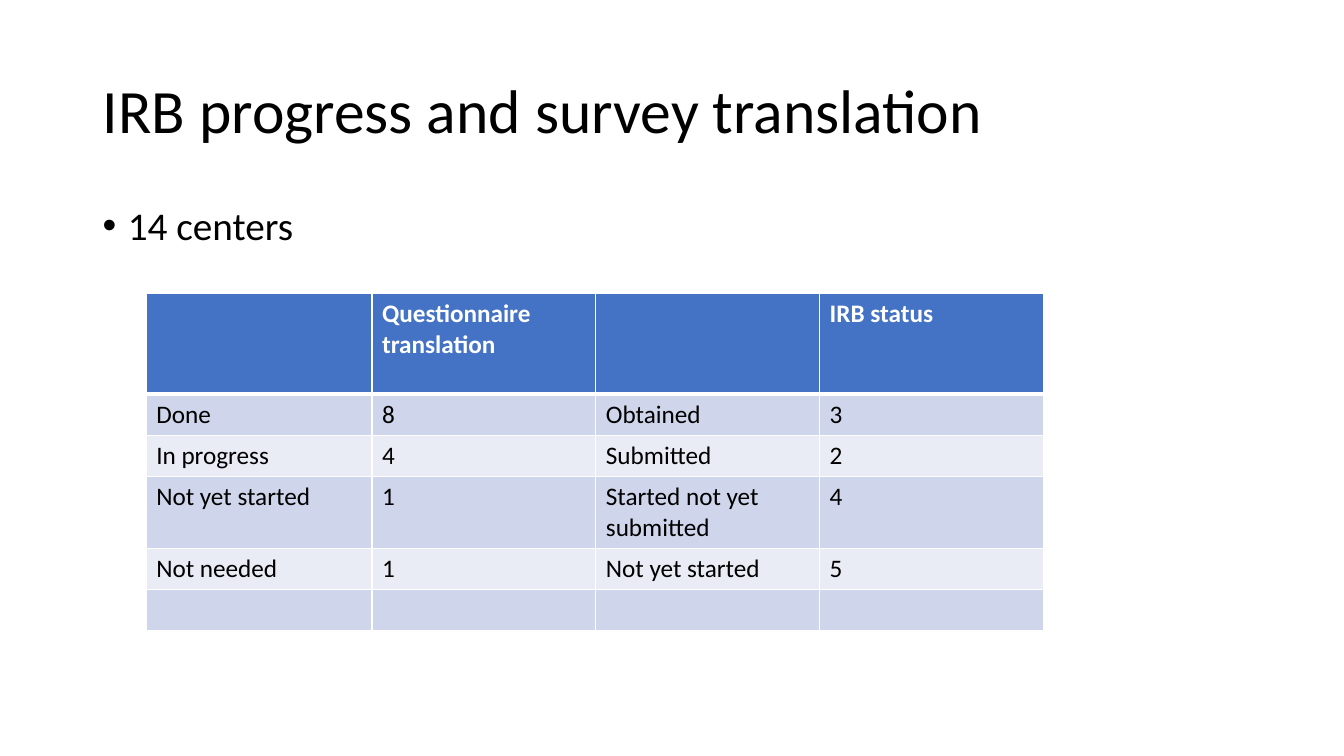
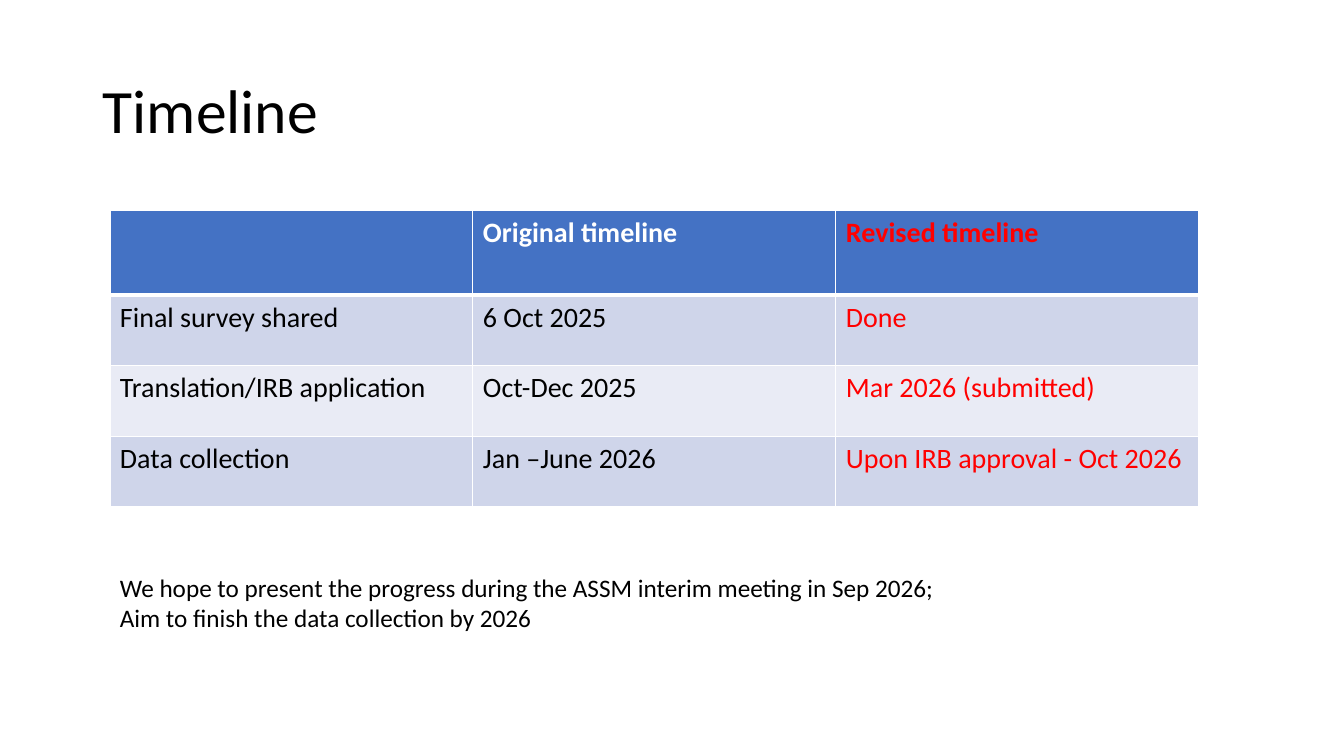
import pptx
import pptx.util
import pptx.dml.color
import pptx.enum.text
import pptx.oxml
import pptx.oxml.ns

Inches = pptx.util.Inches
Pt = pptx.util.Pt
anchor = pptx.enum.text.MSO_ANCHOR

FONT = "Calibri"
BLACK, WHITE, RED = "000000", "FFFFFF", "FF0000"
HEAD = "4472C4"
BANDS = ["CFD5EA", "E9EBF5"]
NS = pptx.oxml.ns.nsdecls("a")


def style(para, size, color=BLACK, bold=False):
    font = para.font
    font.name, font.size, font.bold = FONT, Pt(size), bold
    font.color.rgb = pptx.dml.color.RGBColor.from_string(color)


def grid(slide, left, top, cols, rows, data, size, accent=None):
    """Banded table; the accent column has red text."""
    table = slide.shapes.add_table(
        len(rows), len(cols), Inches(left), Inches(top),
        Inches(sum(cols)), Inches(sum(rows))).table
    table.horz_banding = False
    for col, width in zip(table.columns, cols):
        col.width = Inches(width)
    for r, height in enumerate(rows):
        table.rows[r].height = Inches(height)
        for c, text in enumerate(data[r]):
            cell = table.cell(r, c)
            # White borders, thicker under the header
            props = cell._tc.get_or_add_tcPr()
            for side in "LRTB":
                thick = (r, side) in [(0, "B"), (1, "T")]
                props.append(pptx.oxml.parse_xml(
                    f'<a:ln{side} {NS} w="{Pt(3 if thick else 1)}"><a:solidFill>'
                    f'<a:srgbClr val="{WHITE}"/></a:solidFill></a:ln{side}>'))
            cell.fill.solid()
            fill = BANDS[(r - 1) % 2] if r else HEAD
            cell.fill.fore_color.rgb = pptx.dml.color.RGBColor.from_string(fill)
            cell.text = text
            color = RED if c == accent else BLACK if r else WHITE
            style(cell.text_frame.paragraphs[0], size, color, r == 0)


deck = pptx.Presentation()
deck.slide_width, deck.slide_height = Inches(13.33), Inches(7.5)

# Slides and titles
slides = []
for text in ["IRB progress and survey translation", "Timeline"]:
    slide = deck.slides.add_slide(deck.slide_layouts[5])
    title = slide.shapes.title
    title.left, title.top = Inches(0.92), Inches(0.4)
    title.width, title.height = Inches(11.5), Inches(1.45)
    frame = title.text_frame
    frame.text = text
    frame.auto_size = pptx.enum.text.MSO_AUTO_SIZE.NONE
    frame.vertical_anchor = anchor.MIDDLE
    para = frame.paragraphs[0]
    para.alignment = pptx.enum.text.PP_ALIGN.LEFT
    para.line_spacing = 0.9
    style(para, 44)
    slides.append(slide)
status, plan = slides

# Status: bullet
box = status.shapes.add_textbox(Inches(0.92), Inches(2), Inches(11.5), Inches(0.75))
box.text_frame.word_wrap = True
para = box.text_frame.paragraphs[0]
para.text = "14 centers"
para.line_spacing = 0.9
props = para._p.get_or_add_pPr()
props.set("marL", str(Inches(0.25)))
props.set("indent", str(Inches(-0.25)))
props.append(pptx.oxml.parse_xml(f'<a:buFont {NS} typeface="Arial"/>'))
props.append(pptx.oxml.parse_xml(f'<a:buChar {NS} char="•"/>'))
style(para, 28)

# Status: table
grid(status, 1.45, 2.91, [2.24] + [2.22] * 3, [1, 0.41, 0.41, 0.71, 0.41, 0.41], [
    ["", "Questionnaire translation", "", "IRB status"],
    ["Done", "8", "Obtained", "3"],
    ["In progress", "4", "Submitted", "2"],
    ["Not yet started", "1", "Started not yet submitted", "4"],
    ["Not needed", "1", "Not yet started", "5"],
    ["", "", "", ""],
], 18)

# Plan: table
grid(plan, 1.09, 2.09, [3.6] * 3, [0.84] + [0.7] * 3, [
    ["", "Original timeline", "Revised timeline"],
    ["Final survey shared", "6 Oct 2025", "Done"],
    ["Translation/IRB application", "Oct-Dec 2025", "Mar 2026 (submitted)"],
    ["Data collection", "Jan –June 2026", "Upon IRB approval - Oct 2026"],
], 20, accent=2)

# Plan: closing note
box = plan.shapes.add_textbox(Inches(1.09), Inches(5.63), Inches(8.38), Inches(0.71))
box.text_frame.word_wrap = True
box.text_frame.text = (
    "We hope to present the progress during the ASSM interim meeting in Sep 2026;\n"
    "Aim to finish the data collection by 2026")
for para in box.text_frame.paragraphs:
    style(para, 18)

deck.save("out.pptx")
